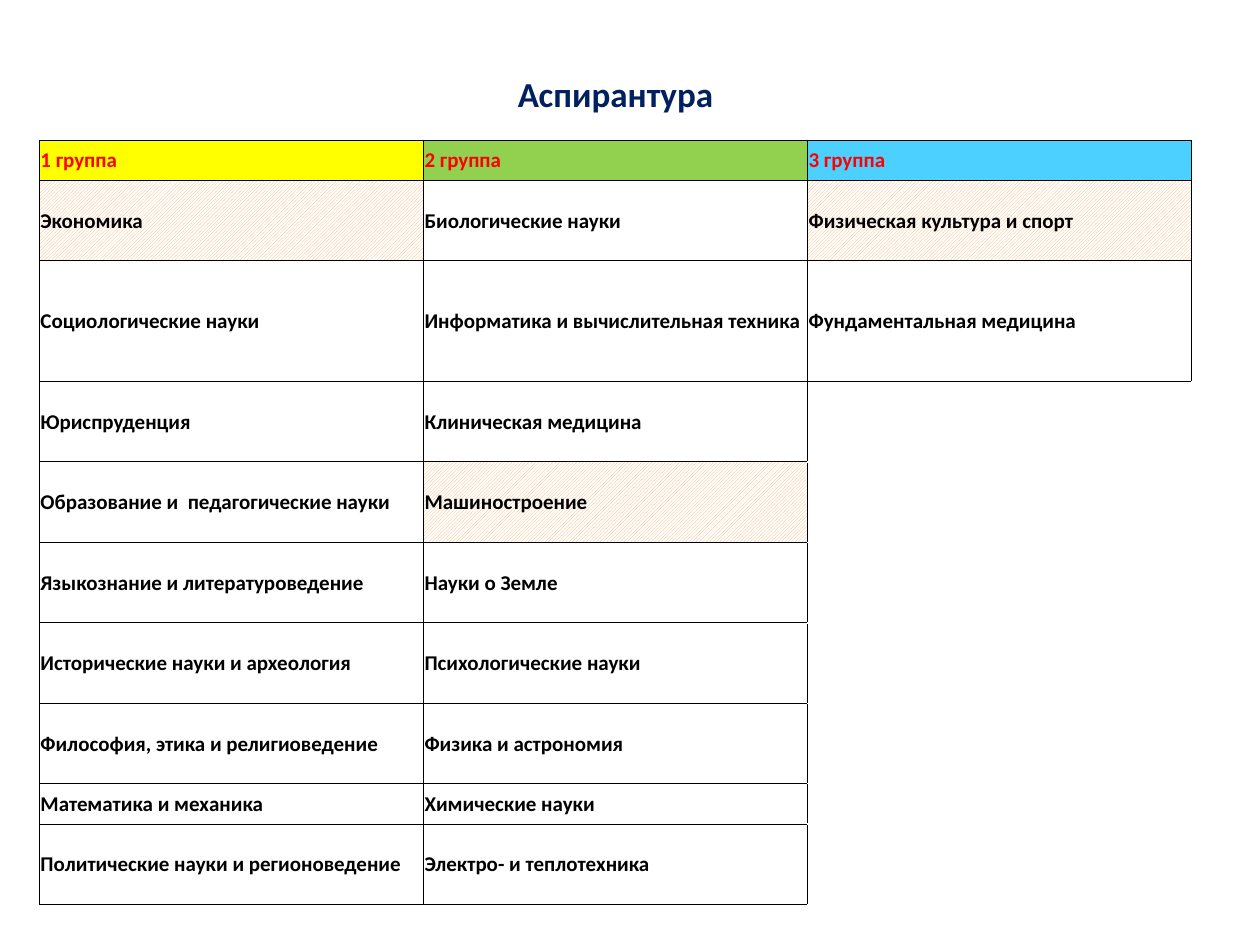
"""Build a slide with a table of postgraduate programmes in three groups."""
from dataclasses import dataclass
from itertools import zip_longest

from lxml.etree import SubElement
from pptx import Presentation
from pptx.dml.color import RGBColor
from pptx.enum.dml import MSO_PATTERN
from pptx.enum.text import MSO_ANCHOR, PP_ALIGN
from pptx.oxml.ns import qn
from pptx.util import Pt


@dataclass(frozen=True)
class Theme:
    font: str = "Calibri"
    title_size: int = 20
    text_size: int = 12
    title: str = "002060"
    heading: str = "FF0000"
    text: str = "000000"
    border: str = "000000"
    hatch: str = "F9B277"
    paper: str = "FFFFFF"


theme = Theme()
groups = [
    ("1 группа", "FFFF00", [
        "Экономика", "Социологические науки", "Юриспруденция",
        "Образование и  педагогические науки", "Языкознание и литературоведение",
        "Исторические науки и археология", "Философия, этика и религиоведение",
        "Математика и механика", "Политические науки и регионоведение"]),
    ("2 группа", "92D050", [
        "Биологические науки", "Информатика и вычислительная техника",
        "Клиническая медицина", "Машиностроение", "Науки о Земле",
        "Психологические науки", "Физика и астрономия", "Химические науки",
        "Электро- и теплотехника"]),
    ("3 группа", "4BD0FF", ["Физическая культура и спорт", "Фундаментальная медицина"]),
]
hatched = {"Экономика", "Машиностроение", "Физическая культура и спорт"}
title_height, line_height, column_width = 52, 23, 219.5
row_lines = [1, 2, 3, 2, 2, 2, 2, 2, 1, 2]


def write_text(cell, text, *, color=theme.text, size=theme.text_size, align=PP_ALIGN.LEFT):
    paragraph = cell.text_frame.paragraphs[0]
    paragraph.alignment = align
    run = paragraph.add_run()
    run.text = text
    run.font.name = theme.font
    run.font.size = Pt(size)
    run.font.bold = True
    run.font.color.rgb = RGBColor.from_string(color)


def add_borders(cell, sides):
    properties = cell._tc.get_or_add_tcPr()
    for side in sides:
        line = SubElement(properties, qn(f"a:ln{side}"), w=str(Pt(0.5)))
        fill = SubElement(line, qn("a:solidFill"))
        SubElement(fill, qn("a:srgbClr"), val=theme.border)


presentation = Presentation()
presentation.slide_width, presentation.slide_height = Pt(720), Pt(540)
slide = presentation.slides.add_slide(presentation.slide_layouts[6])

heights = [title_height] + [line_height * lines for lines in row_lines]
table = slide.shapes.add_table(
    len(heights), len(groups), Pt(22.5), Pt(28),
    Pt(column_width * len(groups)), Pt(sum(heights))).table
table.first_row = table.horz_banding = False
for column in table.columns:
    column.width = Pt(column_width)
for row, height in zip(table.rows, heights):
    row.height = Pt(height)

for cell in table.iter_cells():
    cell.margin_left = cell.margin_right = cell.margin_top = Pt(0.6)
    cell.margin_bottom = Pt(0)
    cell.vertical_anchor = MSO_ANCHOR.MIDDLE

title_cell = table.cell(0, 0)
title_cell.merge(table.cell(0, len(groups) - 1))
write_text(title_cell, "Аспирантура", color=theme.title, size=theme.title_size,
           align=PP_ALIGN.CENTER)
for column_index in range(len(groups)):
    cell = table.cell(0, column_index)
    add_borders(cell, "B")
    cell.fill.background()

for column_index, (name, color, _) in enumerate(groups):
    cell = table.cell(1, column_index)
    write_text(cell, name, color=theme.heading)
    add_borders(cell, "LRTB")
    cell.fill.solid()
    cell.fill.fore_color.rgb = RGBColor.from_string(color)

subject_rows = zip_longest(*(subjects for _, _, subjects in groups))
for row_index, subjects in enumerate(subject_rows, start=2):
    for column_index, subject in enumerate(subjects):
        cell = table.cell(row_index, column_index)
        if subject:
            write_text(cell, subject)
            add_borders(cell, "LRTB")
        else:
            first_empty = row_index == len(groups[column_index][2]) + 2
            add_borders(cell, "LT" if first_empty else "L")
        if subject in hatched:
            cell.fill.patterned()
            cell.fill.pattern = MSO_PATTERN.LIGHT_UPWARD_DIAGONAL
            cell.fill.fore_color.rgb = RGBColor.from_string(theme.hatch)
            cell.fill.back_color.rgb = RGBColor.from_string(theme.paper)
        else:
            cell.fill.background()

presentation.save("out.pptx")
